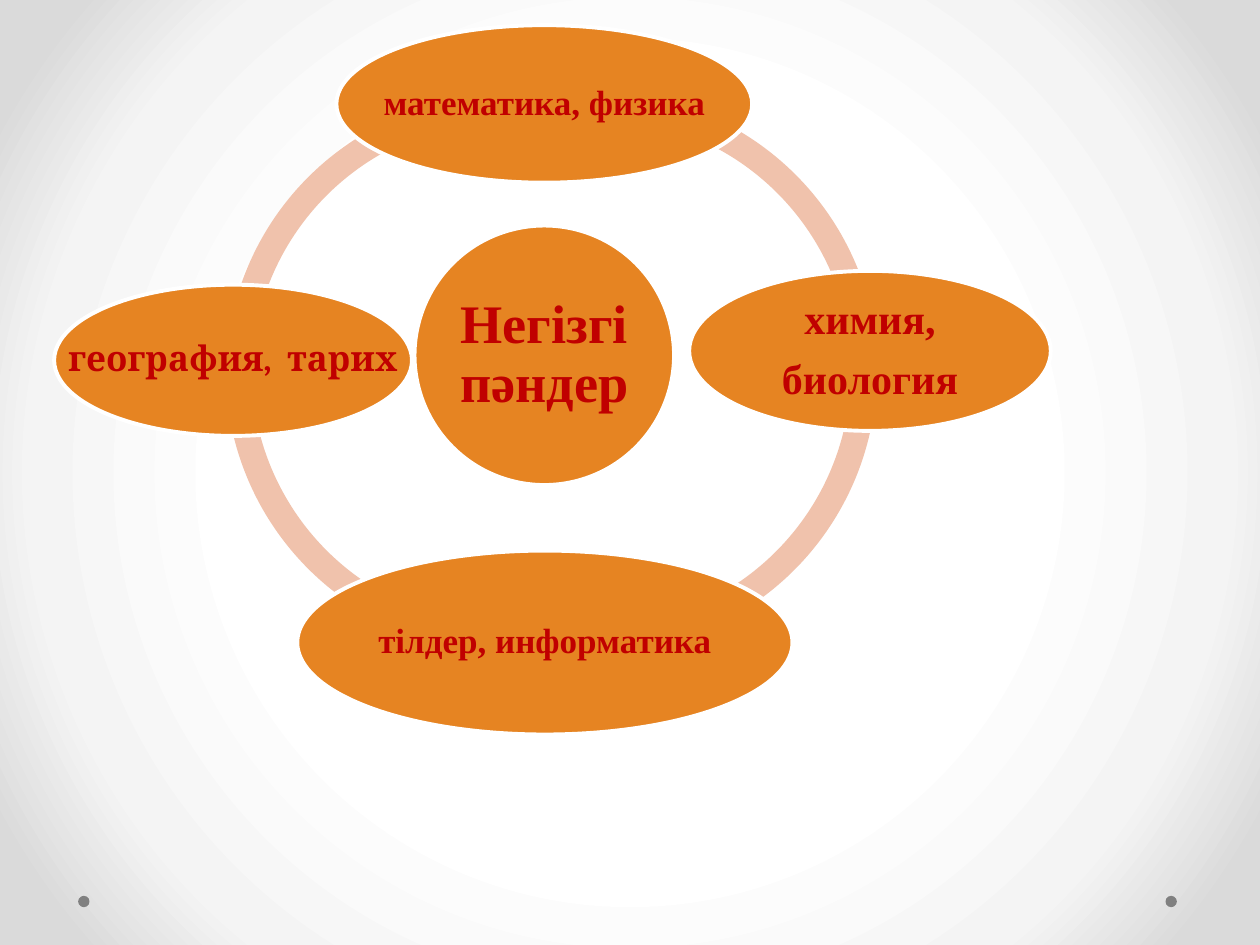
import pptx
import pptx.util
import pptx.oxml
import pptx.oxml.ns
import pptx.dml.color
import pptx.enum.shapes
import pptx.enum.text

theme = {
    "oval": "E68422", "edge": "FFFFFF", "arc": "F0C2AC",
    "dot": "808080", "ink": "C00000",
    "serif": "Times New Roman", "book": "Cambria",
    "hub": 31, "big": 24, "small": 20, "line": 2.25,
    "back": [(50, "FFFFFF"), (76, "F4F4F4"), (92, "DADADA")],
}
dots = [(9.25, 7.11), (0.62, 7.11)]
arcs = [
    (1.79, 0.75, 110.05, 166.6),
    (1.79, 0.69, 49.44, 109.04),
    (2.48, 0.7, 213.55, 60.35),
    (2.49, 0.73, 155.61, 213.1),
]
ovals = [
    ("Негізгі пәндер", (3.29, 1.79, 2.06, 2.06), "hub", "serif"),
    ("математика, физика", (2.67, 0.2, 3.3, 1.25), "small", "serif"),
    ("химия,\nбиология", (5.47, 2.15, 2.87, 1.27), "big", "serif"),
    ("тілдер, информатика", (2.36, 4.37, 3.93, 1.46), "small", "serif"),
    ("география,  тарих", (0.43, 2.26, 2.84, 1.2), "small", "book"),
]

Inches = pptx.util.Inches
Kind = pptx.enum.shapes.MSO_SHAPE


def tint(name):
    return pptx.dml.color.RGBColor.from_string(theme[name])


def draw(slide, kind, box, fill):
    shape = slide.shapes.add_shape(kind, *map(Inches, box))
    shape.shadow.inherit = False
    shape.fill.solid()
    shape.fill.fore_color.rgb = tint(fill)
    shape.line.fill.background()
    return shape


def label(shape, text, size, font):
    frame = shape.text_frame
    frame.text = text
    frame.word_wrap = size == "hub"
    frame.vertical_anchor = pptx.enum.text.MSO_ANCHOR.MIDDLE
    for side in ("left", "top", "right", "bottom"):
        setattr(frame, "margin_" + side, Inches(0.03))
    for para in frame.paragraphs:
        para.alignment = pptx.enum.text.PP_ALIGN.CENTER
        para.line_spacing = 0.9
        para.space_after = pptx.util.Pt(round(theme[size] * 0.35, 1))
        for run in para.runs:
            run.font.name = theme[font]
            run.font.size = pptx.util.Pt(theme[size])
            run.font.bold = True
            run.font.color.rgb = tint("ink")


def shade(slide):
    stops = "".join(
        f'<a:gs pos="{pos * 1000}"><a:srgbClr val="{hue}"/></a:gs>'
        for pos, hue in theme["back"]
    )
    back = pptx.oxml.parse_xml(
        f'<p:bg {pptx.oxml.ns.nsdecls("p", "a")}><p:bgPr>'
        f'<a:gradFill rotWithShape="1"><a:gsLst>{stops}</a:gsLst>'
        '<a:path path="circle">'
        '<a:fillToRect l="50000" t="50000" r="50000" b="50000"/>'
        '</a:path></a:gradFill><a:effectLst/></p:bgPr></p:bg>'
    )
    slide.element.cSld.insert(0, back)


def main():
    deck = pptx.Presentation()
    deck.slide_width, deck.slide_height = Inches(10), Inches(7.5)
    slide = deck.slides.add_slide(deck.slide_layouts[6])
    shade(slide)
    for left, top in dots:
        draw(slide, Kind.OVAL, (left, top, 0.09, 0.09), "dot")
    for left, top, start, end in arcs:
        arc = draw(slide, Kind.BLOCK_ARC, (left, top, 4.48, 4.48), "arc")
        for spot, turn in enumerate((start, end, 0.046)):
            arc.adjustments[spot] = turn
    for text, box, size, font in ovals:
        oval = draw(slide, Kind.OVAL, box, "oval")
        oval.line.color.rgb = tint("edge")
        oval.line.width = pptx.util.Pt(theme["line"])
        label(oval, text, size, font)
    deck.save("out.pptx")


if __name__ == "__main__":
    main()
